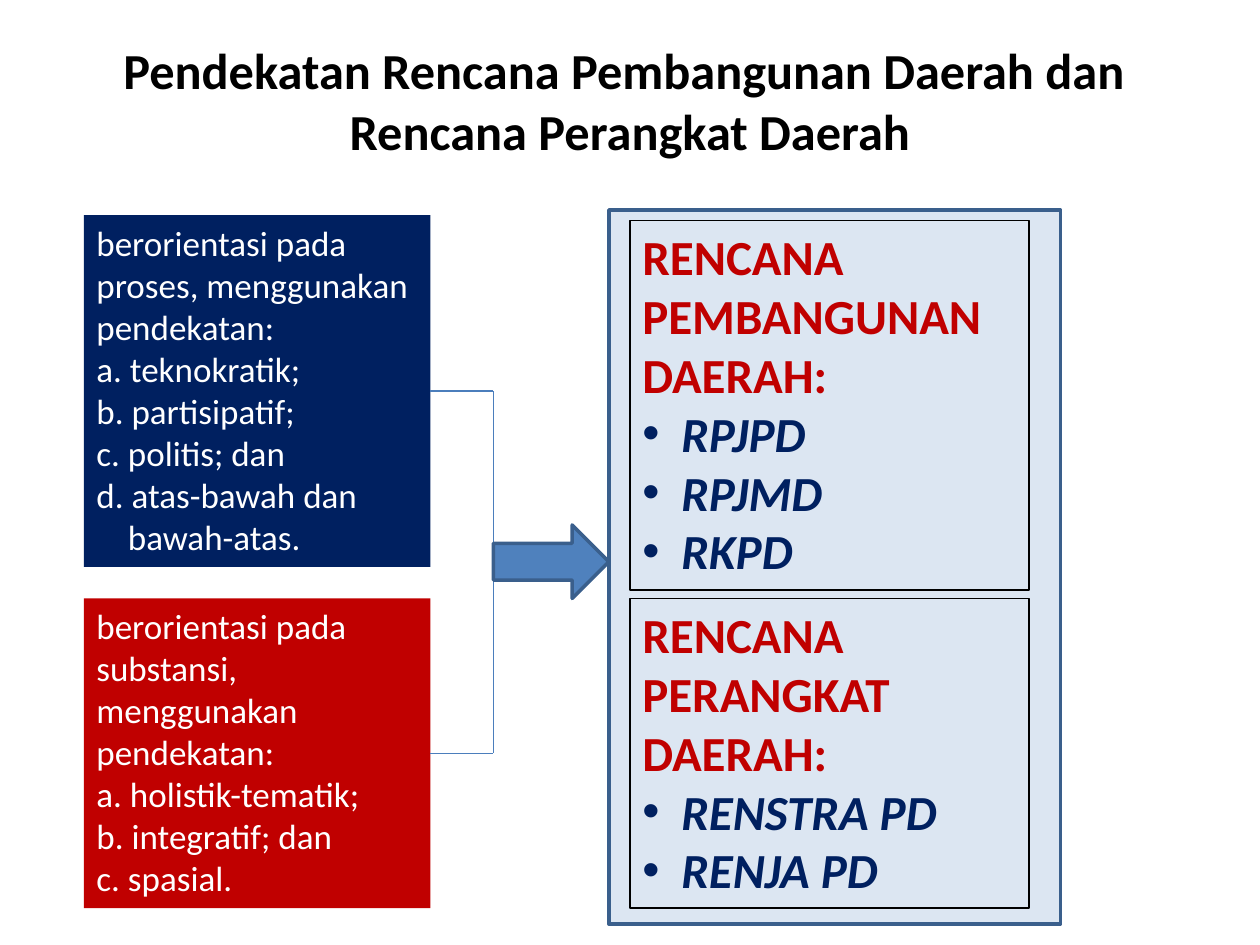
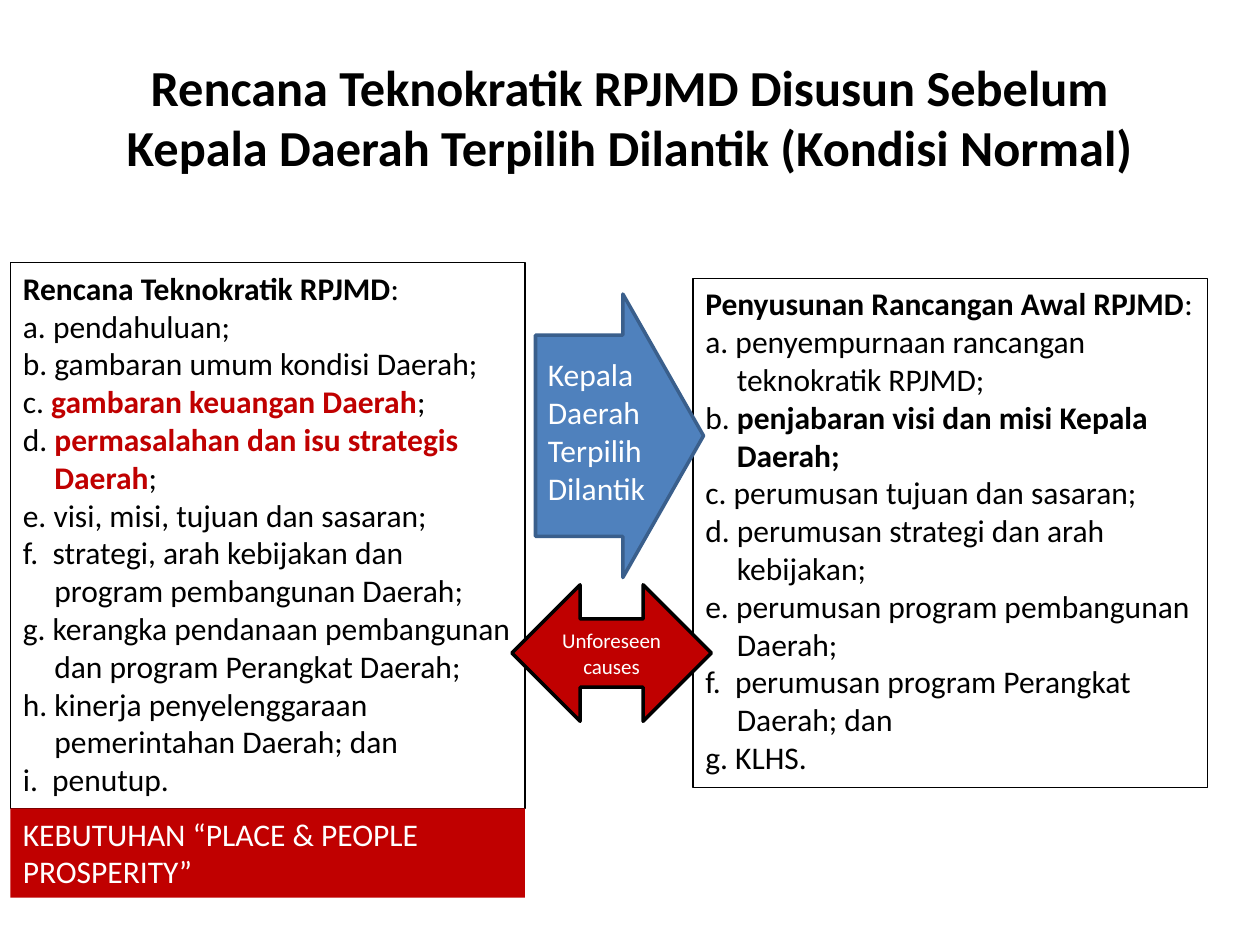
from lxml import etree
from pptx import Presentation
from pptx.dml.color import RGBColor
from pptx.enum.shapes import MSO_CONNECTOR, MSO_SHAPE
from pptx.enum.text import MSO_ANCHOR, PP_ALIGN
from pptx.oxml.ns import qn
from pptx.util import Inches, Pt

RECTANGLE = MSO_SHAPE.RECTANGLE
RIGHT_ARROW = MSO_SHAPE.RIGHT_ARROW
LEFT_RIGHT_ARROW = MSO_SHAPE.LEFT_RIGHT_ARROW
STRAIGHT = MSO_CONNECTOR.STRAIGHT
TOP, MIDDLE = MSO_ANCHOR.TOP, MSO_ANCHOR.MIDDLE
LEFT, CENTER = PP_ALIGN.LEFT, PP_ALIGN.CENTER

FONT = "Calibri"
BLACK = RGBColor(0x00, 0x00, 0x00)
WHITE = RGBColor(0xFF, 0xFF, 0xFF)
RED = RGBColor(0xC0, 0x00, 0x00)
NAVY = RGBColor(0x00, 0x20, 0x60)
BLUE = RGBColor(0x4F, 0x81, 0xBD)
BLUE_EDGE = RGBColor(0x3A, 0x5F, 0x8C)
LINK_BLUE = RGBColor(0x4B, 0x7E, 0xBC)
PALE_BLUE = RGBColor(0xDC, 0xE6, 0xF2)

COLUMNS, ROWS = 120, 90
CELL = Inches(10) // COLUMNS
BULLET_INDENT, LETTER_INDENT = 0.31, 0.25


def cells(*lengths):
    """Turn grid lengths into slide lengths."""
    return [round(length * CELL) for length in lengths]


def add_span(para, text, size, color, bold=False, italic=False):
    span = para.add_run()
    span.text = text
    font = span.font
    font.name, font.size, font.bold, font.italic = FONT, Pt(size), bold, italic
    font.color.rgb = color


def next_para(frame, align=LEFT):
    """Return the unused first paragraph, or a new one after the last."""
    para = frame.paragraphs[0]
    if para.runs:
        para = frame.add_paragraph()
    para.alignment = align
    return para


def hang(para, indent, bullet=None):
    """Give a hanging indent in inches, and a bullet if one is named."""
    properties = para._p.get_or_add_pPr()
    properties.set("marL", str(Inches(indent)))
    properties.set("indent", str(-Inches(indent)))
    if bullet:
        etree.SubElement(properties, qn("a:buFont")).set("typeface", "Arial")
        etree.SubElement(properties, qn("a:buChar")).set("char", bullet)


def add_box(page, area, fill=None, edge=None, edge_width=0.75, kind=RECTANGLE,
            anchor=TOP):
    box = page.shapes.add_shape(kind, *cells(*area))
    box.shadow.inherit = False
    if fill is None:
        box.fill.background()
    else:
        box.fill.solid()
        box.fill.fore_color.rgb = fill
    if edge is None:
        box.line.fill.background()
    else:
        box.line.color.rgb = edge
        box.line.width = Pt(edge_width)
    box.text_frame.word_wrap = True
    box.text_frame.vertical_anchor = anchor
    return box


def add_text_area(page, area, anchor=TOP):
    frame = page.shapes.add_textbox(*cells(*area)).text_frame
    frame.word_wrap = True
    frame.vertical_anchor = anchor
    return frame


def add_title(page, top, *lines):
    frame = add_text_area(page, (6, top, COLUMNS - 12, 15), MIDDLE)
    para = next_para(frame, CENTER)
    for number, line in enumerate(lines):
        if number:
            para.add_line_break()
        add_span(para, line, 28.8, BLACK, bold=True)


def add_link(page, *ends):
    link = page.shapes.add_connector(STRAIGHT, *cells(*ends))
    link.line.color.rgb = LINK_BLUE
    link.line.width = Pt(0.75)
    etree.SubElement(link._element.spPr, qn("a:effectLst"))


def add_approach(page, area, fill, lines):
    frame = add_box(page, area, fill).text_frame
    for line in lines:
        para = next_para(frame)
        if line.startswith("d. "):
            hang(para, LETTER_INDENT)
        add_span(para, line, 20, WHITE)


def add_plan(page, area, heading, plans):
    frame = add_box(page, area, edge=BLACK).text_frame
    add_span(next_para(frame), heading, 28, RED, bold=True)
    for plan in plans:
        para = next_para(frame)
        hang(para, BULLET_INDENT, "•")
        add_span(para, plan, 28, NAVY, bold=True, italic=True)


def add_contents(page, area, heading, items, key_color):
    """Add a lettered list; an item is (letter, key words, plain words)."""
    frame = add_box(page, area, edge=BLACK).text_frame
    para = next_para(frame)
    add_span(para, heading, 18, BLACK, bold=True)
    add_span(para, ":", 18, BLACK)
    for letter, key_words, plain_words in items:
        para = next_para(frame)
        hang(para, LETTER_INDENT)
        add_span(para, letter, 18, BLACK)
        if key_words:
            add_span(para, key_words, 18, key_color, bold=True)
        if plain_words:
            add_span(para, plain_words, 18, BLACK)


def build_approaches(page):
    left, width, plan_left, plan_width = 8, 33, 60, 38
    process_top, process_height = 20.5, 33.5
    lower_top, lower_height = 57, 29.5
    joint = 47
    add_box(page, (58, 20, 43, 68), PALE_BLUE, BLUE_EDGE, 2)
    add_title(page, 2, "Pendekatan Rencana Pembangunan Daerah dan ",
              "Rencana Perangkat Daerah")
    add_approach(page, (left, lower_top, width, lower_height), RED, [
        "berorientasi pada",
        "substansi, menggunakan pendekatan:",
        "a. holistik-tematik;",
        "b. integratif; dan",
        "c. spasial."])
    add_approach(page, (left, process_top, width, process_height), NAVY, [
        "berorientasi pada proses, menggunakan pendekatan:",
        "a. teknokratik;",
        "b. partisipatif;",
        "c. politis; dan",
        "d. atas-bawah dan bawah-atas."])
    add_plan(page, (plan_left, 21, plan_width, 35.2),
             "RENCANA PEMBANGUNAN DAERAH:", ["RPJPD", "RPJMD", "RKPD"])
    add_plan(page, (plan_left, lower_top, plan_width, lower_height),
             "RENCANA PERANGKAT DAERAH:", ["RENSTRA PD", "RENJA PD"])
    middles = (process_top + process_height / 2, lower_top + lower_height / 2)
    add_link(page, joint, middles[0], joint, middles[1])
    for middle in middles:
        add_link(page, left + width, middle, joint, middle)
    add_box(page, (joint, 50, 11, 7), BLUE, BLUE_EDGE, 2, RIGHT_ARROW)


def build_technocratic_plan(page):
    left, width, need_top = 1, 49, 77
    add_title(page, 3.6, "Rencana Teknokratik RPJMD Disusun Sebelum "
              "Kepala Daerah Terpilih Dilantik (Kondisi Normal)")
    add_contents(page, (left, 25, width, need_top - 25),
                 "Rencana Teknokratik RPJMD", [
        ("a. ", "", "pendahuluan;"),
        ("b. ", "", "gambaran umum kondisi Daerah;"),
        ("c. ", "gambaran keuangan Daerah", ";"),
        ("d. ", "permasalahan dan isu strategis Daerah", ";"),
        ("e. ", "", "visi, misi, tujuan dan sasaran;"),
        ("f.  ", "", "strategi, arah kebijakan dan program pembangunan Daerah;"),
        ("g. ", "", "kerangka pendanaan pembangunan dan program Perangkat Daerah;"),
        ("h. ", "", "kinerja penyelenggaraan pemerintahan Daerah; dan"),
        ("i.  ", "", "penutup.")], RED)
    add_contents(page, (66, 26.5, width, 48.5),
                 "Penyusunan Rancangan Awal RPJMD", [
        ("a. ", "", "penyempurnaan rancangan teknokratik RPJMD;"),
        ("b. ", "penjabaran visi dan misi Kepala Daerah;", ""),
        ("c. ", "", "perumusan tujuan dan sasaran;"),
        ("d. ", "", "perumusan strategi dan arah kebijakan;"),
        ("e. ", "", "perumusan program pembangunan Daerah;"),
        ("f.  ", "", "perumusan program Perangkat Daerah; dan"),
        ("g. ", "", "KLHS.")], BLACK)

    arrow = add_box(page, (51, 28, 16, 27), BLUE, BLUE_EDGE, 2, RIGHT_ARROW)
    arrow.adjustments[0], arrow.adjustments[1] = 0.71, 0.48
    inauguration = add_text_area(page, (51, 33.25, 14, 15.75))
    add_span(next_para(inauguration), "Kepala Daerah Terpilih Dilantik", 18, WHITE)

    causes = add_box(page, (48.75, 55.7, 19, 13), RED, BLACK, 2,
                     LEFT_RIGHT_ARROW, MIDDLE)
    add_span(next_para(causes.text_frame, CENTER), "Unforeseen causes", 12, WHITE)
    need = add_box(page, (left, need_top, width, 8.5), RED)
    add_span(next_para(need.text_frame),
             "KEBUTUHAN “PLACE & PEOPLE PROSPERITY”", 18, WHITE)


def main():
    deck = Presentation()
    deck.slide_width, deck.slide_height = cells(COLUMNS, ROWS)
    blank = deck.slide_layouts[6]
    for build in (build_approaches, build_technocratic_plan):
        build(deck.slides.add_slide(blank))
    deck.save("out.pptx")


if __name__ == "__main__":
    main()
